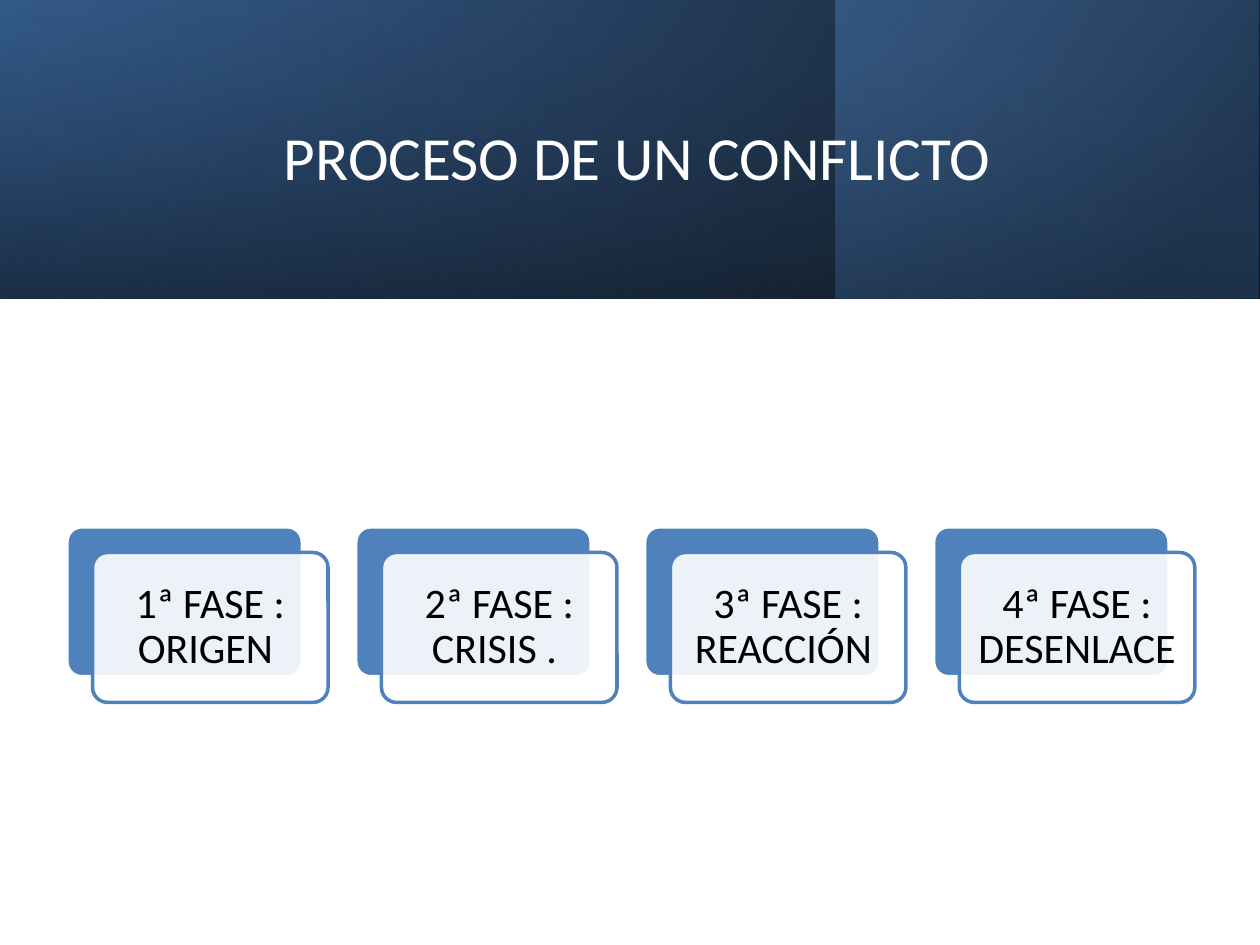
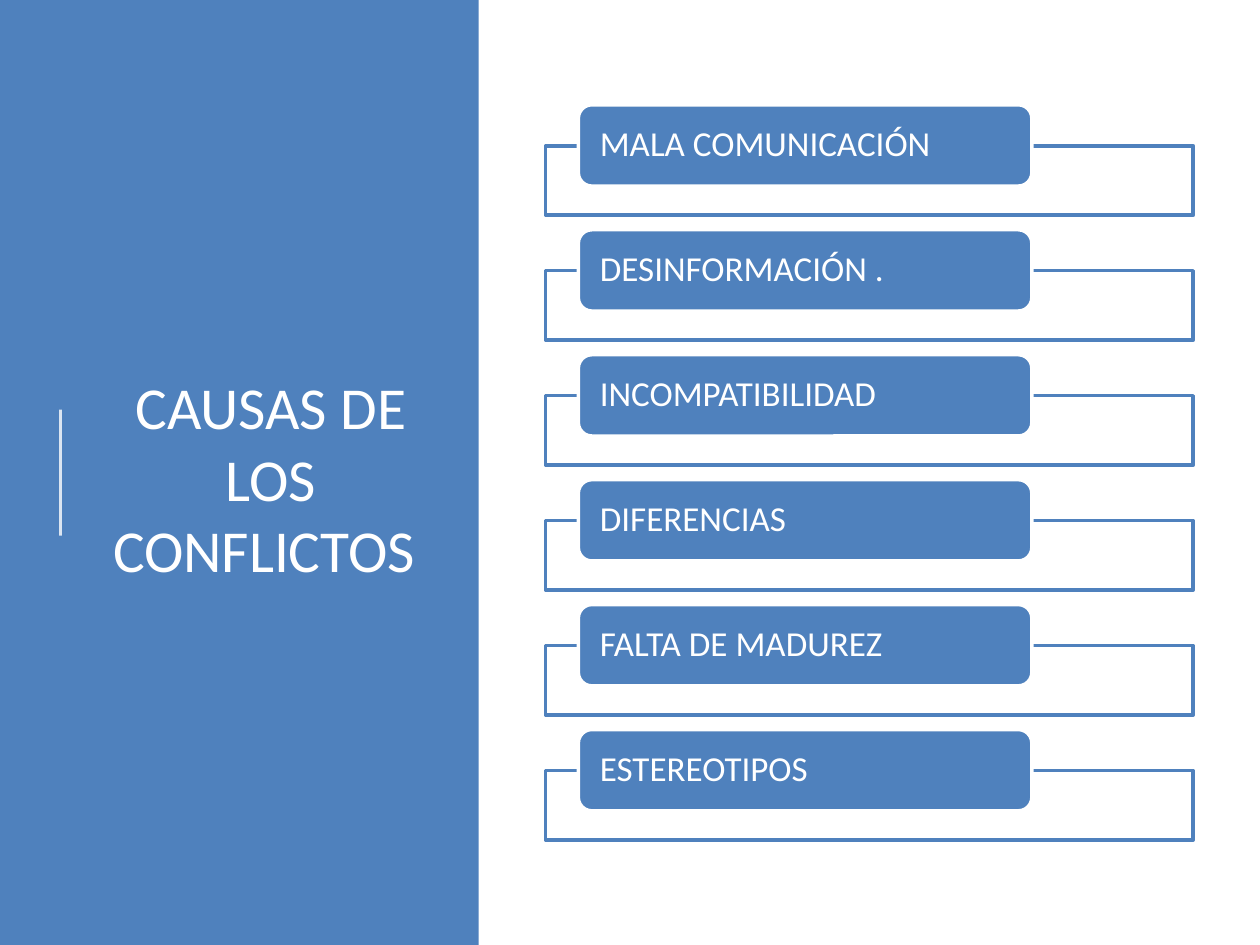
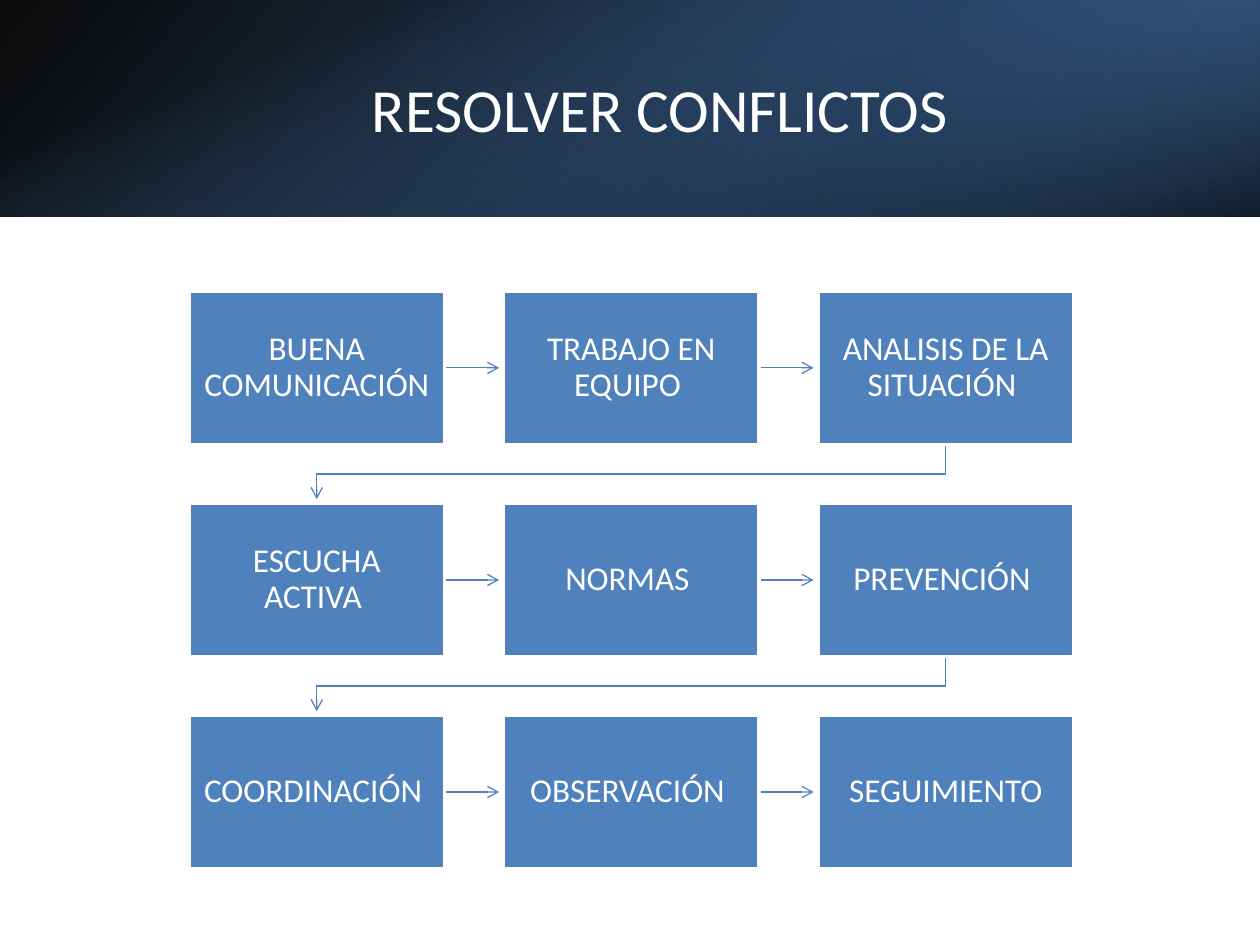
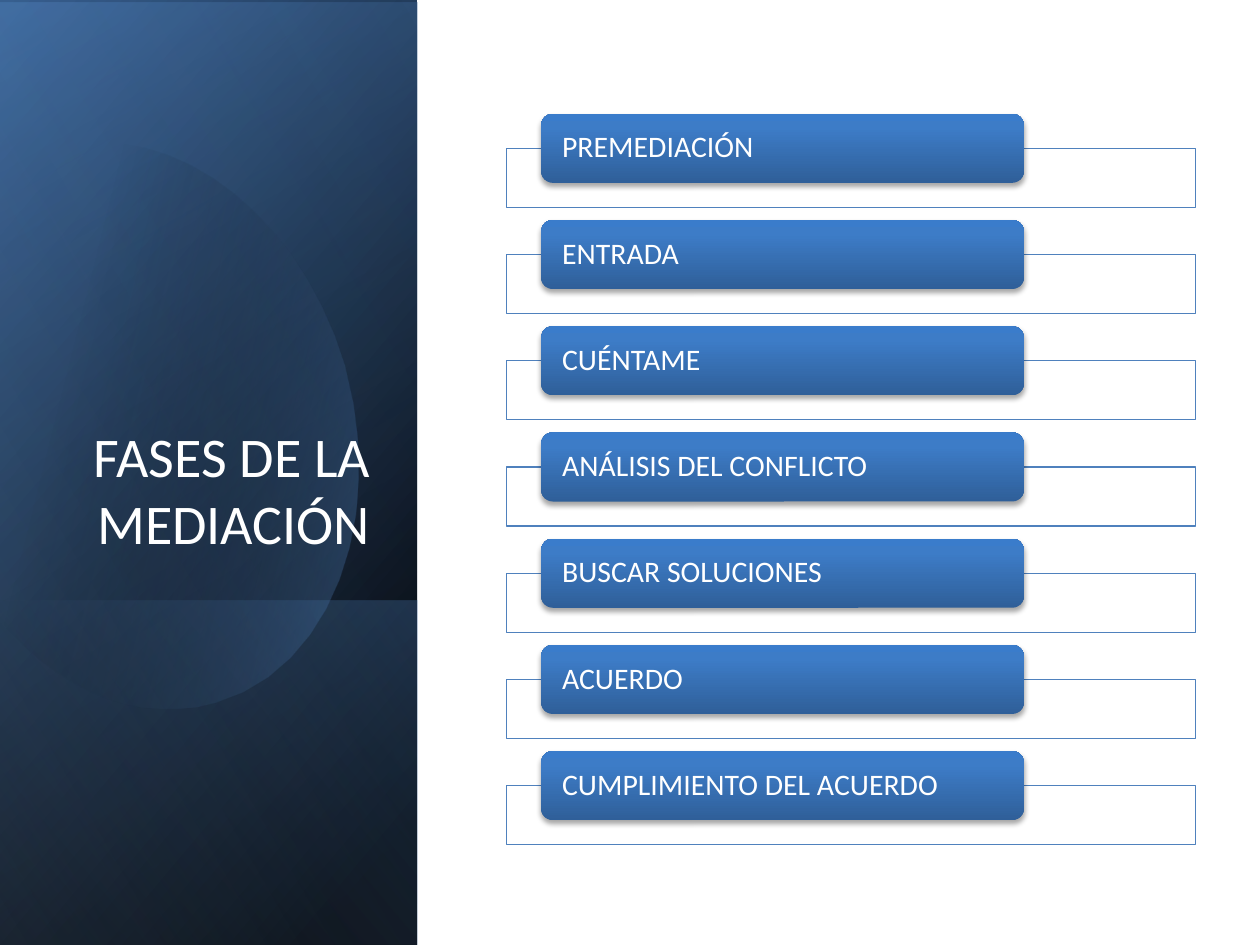
from lxml.etree import SubElement
from pptx import Presentation
from pptx.dml.color import RGBColor
from pptx.enum.shapes import MSO_CONNECTOR, MSO_SHAPE
from pptx.enum.text import MSO_ANCHOR, MSO_AUTO_SIZE, PP_ALIGN
from pptx.oxml import parse_xml
from pptx.oxml.ns import nsdecls, qn
from pptx.util import Pt

COLORS = {
    "white": "FFFFFF",
    "black": "000000",
    "blue": "4F81BD",
    "dark blue": "376092",
    "navy": "254061",
    "pale blue": "95B3D7",
    "pill dark": "2F5F99",
    "pill middle": "3D7CC7",
    "pill light": "3A7CCB",
}
FONT = "Calibri"
SLIDE_WIDTH, SLIDE_HEIGHT = 720, 540
TITLE_ONLY = 5

PHASES = ["1ª FASE : ORIGEN ", "2ª FASE : CRISIS . ",
          "3ª FASE : REACCIÓN ", "4ª FASE : DESENLACE "]
CAUSES = ["MALA COMUNICACIÓN", "DESINFORMACIÓN .", "INCOMPATIBILIDAD",
          "DIFERENCIAS", "FALTA DE MADUREZ", "ESTEREOTIPOS"]
STEPS = [
    ["BUENA COMUNICACIÓN ", "TRABAJO EN EQUIPO ", "ANALISIS DE LA SITUACIÓN "],
    ["ESCUCHA ACTIVA ", "NORMAS ", "PREVENCIÓN "],
    ["COORDINACIÓN ", "OBSERVACIÓN ", "SEGUIMIENTO"],
]
MEDIATION = ["PREMEDIACIÓN", "ENTRADA", "CUÉNTAME", "ANÁLISIS DEL CONFLICTO",
             "BUSCAR SOLUCIONES", "ACUERDO", "CUMPLIMIENTO DEL ACUERDO"]
PILL_STOPS = [(0, "pill dark", 100), (80, "pill middle", 100),
              (100, "pill light", 100)]


# Fills, lines and effects
def rgb(name):
    return RGBColor.from_string(COLORS[name])


def set_opacity(shape, percent):
    """Set the opacity of the first colour of a shape."""
    color = shape.element.spPr.find(".//" + qn("a:srgbClr"))
    SubElement(color, qn("a:alpha")).set("val", str(percent * 1000))


def set_gradient(shape, stops, angle):
    """Fill with (position, colour, opacity) stops; the angle runs clockwise."""
    stop_xml = "".join(
        f'<a:gs pos="{position * 1000}"><a:srgbClr val="{COLORS[color]}">'
        f'<a:alpha val="{opacity * 1000}"/></a:srgbClr></a:gs>'
        for position, color, opacity in stops)
    gradient = parse_xml(
        f'<a:gradFill {nsdecls("a")} rotWithShape="1"><a:gsLst>{stop_xml}</a:gsLst>'
        f'<a:lin ang="{angle * 60000}" scaled="0"/></a:gradFill>')
    shape.fill.background()
    properties = shape.element.spPr
    properties.replace(properties.find(qn("a:noFill")), gradient)


def set_line(shape, color, width):
    shape.line.color.rgb = rgb(color)
    shape.line.width = Pt(width)


def add_arrowhead(shape):
    line = shape.element.spPr.find(qn("a:ln"))
    SubElement(line, qn("a:tailEnd")).set("type", "arrow")


def add_soft_shadow(shape):
    effects = shape.element.spPr.find(qn("a:effectLst"))
    effects.append(parse_xml(
        f'<a:outerShdw {nsdecls("a")} blurRad="{Pt(3.1)}" dist="{Pt(1.8)}" '
        f'dir="5400000" rotWithShape="0"><a:srgbClr val="{COLORS["black"]}">'
        '<a:alpha val="35000"/></a:srgbClr></a:outerShdw>'))


# Shapes and text
def add_box(slide, kind, box, fill=None, line=None, line_width=2):
    shape = slide.shapes.add_shape(kind, *map(Pt, box))
    shape.shadow.inherit = False
    if fill:
        shape.fill.solid()
        shape.fill.fore_color.rgb = rgb(fill)
    if line:
        set_line(shape, line, line_width)
    else:
        shape.line.fill.background()
    return shape


def write(shape, text, size, color="white", align=PP_ALIGN.CENTER,
          anchor=MSO_ANCHOR.MIDDLE, spacing=None, insets=(7.2, 7.2)):
    frame = shape.text_frame
    frame.word_wrap = True
    frame.auto_size = MSO_AUTO_SIZE.NONE
    frame.vertical_anchor = anchor
    frame.margin_left = frame.margin_right = Pt(insets[0])
    frame.margin_top = frame.margin_bottom = Pt(insets[1])
    paragraph = frame.paragraphs[0]
    paragraph.alignment = align
    paragraph.line_spacing = spacing
    run = paragraph.add_run()
    run.text = text
    run.font.name = FONT
    run.font.size = Pt(size)
    run.font.color.rgb = rgb(color)


def add_title(slide, text, box, size, **style):
    """Place the title in front of the bands drawn so far."""
    title = slide.shapes.title
    title.left, title.top, title.width, title.height = map(Pt, box)
    title.element.getparent().append(title.element)
    write(title, text, size, insets=(7.2, 3.6), **style)


def add_band(slide, box, stops, angle, rotation=0, flip=True):
    """Draw a gradient band; box is where a turned band ends up."""
    left, top, width, height = box
    if rotation in (90, 270):
        left, top = left + (width - height) / 2, top + (height - width) / 2
        width, height = height, width
    band = add_box(slide, MSO_SHAPE.RECTANGLE, (left, top, width, height))
    set_gradient(band, stops, angle)
    band.rotation = rotation
    if flip:
        band.element.spPr.find(qn("a:xfrm")).set("flipH", "1")


def add_freeform(slide, points, close):
    start, *rest = [(Pt(x), Pt(y)) for x, y in points]
    builder = slide.shapes.build_freeform(*start)
    builder.add_line_segments(rest, close=close)
    shape = builder.convert_to_shape()
    shape.shadow.inherit = False
    return shape


def add_line(slide, start, end, color, width):
    line = slide.shapes.add_connector(
        MSO_CONNECTOR.STRAIGHT, *map(Pt, start + end))
    set_line(line, color, width)
    SubElement(line.element.spPr, qn("a:effectLst"))
    return line


def curve(start, control_1, control_2, end, pieces=12):
    """Points on a cubic curve, without its start."""
    points = []
    for piece in range(1, pieces + 1):
        t = piece / pieces
        weights = ((1 - t) ** 3, 3 * t * (1 - t) ** 2, 3 * t * t * (1 - t), t ** 3)
        corners = (start, control_1, control_2, end)
        points.append(tuple(
            sum(weight * corner[axis] for weight, corner in zip(weights, corners))
            for axis in (0, 1)))
    return points


def add_pill_list(slide, items, frame, pill, pitch, size, glossy=False):
    """Stack outlined frames, each with a labelled pill on its top edge."""
    for index, item in enumerate(items):
        shift = index * pitch
        outline = add_box(slide, MSO_SHAPE.RECTANGLE,
                          (frame[0], frame[1] + shift, *frame[2:]),
                          "white", "blue", 0.75 if glossy else 2)
        set_opacity(outline, 90)
        label = add_box(slide, MSO_SHAPE.ROUNDED_RECTANGLE,
                        (pill[0], pill[1] + shift, *pill[2:]),
                        "blue", None if glossy else "white")
        if glossy:
            set_gradient(label, PILL_STOPS, 270)
            add_soft_shadow(label)
        write(label, item, size, align=PP_ALIGN.LEFT, spacing=0.9, insets=(10, 0))


# Slides
def build_process(slide):
    height = 170.6
    add_band(slide, (0, 0, SLIDE_WIDTH, height),
             [(0, "black", 96), (100, "dark blue", 100)], 330)
    add_band(slide, (477.4, 0, 242, height),
             [(19, "navy", 68), (100, "blue", 48)], 320)
    add_band(slide, (0, 0, SLIDE_WIDTH, height),
             [(23, "dark blue", 16), (99, "black", 45)], 350, rotation=270)
    add_title(slide, "PROCESO DE UN CONFLICTO ", (81.4, 27.4, 573.8, 123.8), 35)

    # Phase cards, each over a blue plate
    left, top, width, height, pitch, offset = 38.2, 301, 134.6, 85.7, 165.1, 14.7
    for index, phase in enumerate(PHASES):
        x = left + index * pitch
        plate = add_box(slide, MSO_SHAPE.ROUNDED_RECTANGLE,
                        (x, top, width, height), "blue", "white")
        card = add_box(slide, MSO_SHAPE.ROUNDED_RECTANGLE,
                       (x + offset, top + offset, width, height), "white", "blue")
        plate.adjustments[0] = card.adjustments[0] = 0.1
        set_opacity(card, 90)
        write(card, phase, 24, "black", spacing=0.9)


def build_causes(slide):
    add_box(slide, MSO_SHAPE.RECTANGLE, (0, 0, 273.6, SLIDE_HEIGHT), "blue")
    add_title(slide, "CAUSAS DE LOS CONFLICTOS ", (55.4, 56.2, 198.7, 433.4), 34)
    accent = add_line(slide, (34.6, 306), (34.6, 234), "white", 1.5)
    set_opacity(accent, 80)
    add_pill_list(slide, CAUSES, (311.8, 83.3, 370.1, 39.7),
                  (330.5, 59.9, 259.2, 46.5), 71.4, 20)


def build_resolution(slide):
    height = 123.8
    add_band(slide, (0, 0, SLIDE_WIDTH, height),
             [(0, "black", 96), (100, "dark blue", 100)], 140)
    add_band(slide, (480, 0, 240, height),
             [(19, "navy", 68), (100, "blue", 79)], 320, rotation=180)
    add_band(slide, (0, 0, SLIDE_WIDTH, height),
             [(23, "blue", 0), (99, "black", 74)], 340, rotation=90, flip=False)
    add_title(slide, "RESOLVER CONFLICTOS", (80.6, 27.4, 593.3, 69.1), 35)

    left, top, width, height = 108, 166.4, 146, 87.6
    pitch_x, pitch_y, reach = 179.7, 121.2, 31.2
    last_column = len(STEPS[0]) - 1
    for row, steps in enumerate(STEPS):
        y = top + row * pitch_y
        for column, step in enumerate(steps):
            x = left + column * pitch_x
            # Arrow to the next step
            if column < last_column:
                middle = y + height / 2
                add_arrowhead(add_line(slide, (x + width, middle),
                                       (x + width + reach, middle), "blue", 0.75))
            elif row < len(STEPS) - 1:
                start_x, end_x = x + width / 2, left + width / 2
                bottom = y + height
                turn = bottom + (pitch_y - height) / 2
                route = add_freeform(slide, [
                    (start_x, bottom), (start_x, turn),
                    (end_x, turn), (end_x, bottom + reach)], close=False)
                route.fill.background()
                set_line(route, "blue", 0.75)
                add_arrowhead(route)
            box = add_box(slide, MSO_SHAPE.RECTANGLE,
                          (x, y, width, height), "blue", "white")
            write(box, step, 19, spacing=0.9)


def build_mediation(slide):
    width = 238.3
    panel = (0, 0, width, SLIDE_HEIGHT)
    add_band(slide, panel,
             [(8, "black", 100), (100, "dark blue", 100)], 50, rotation=90)
    add_band(slide, (0, 1.4, width, SLIDE_HEIGHT),
             [(0, "black", 0), (99, "blue", 46)], 30, rotation=90)
    add_band(slide, (0, 343, width, 197),
             [(2, "blue", 29), (100, "black", 30)], 130, rotation=90)

    # Rounded glow that runs off the left edge
    crown, right, base = (69.1, 82.1), (196.6, 208.8), (123.1, 401)
    lower_left, upper_left, shoulder = (5, 360), (-10.8, 110.9), (32.4, 85)
    glow = add_freeform(slide, [
        crown,
        *curve(crown, (123.1, 87.8), (175.7, 138.2), right),
        *curve(right, (221, 296.6), (188.6, 382.3), base),
        *curve(base, (82.1, 413.3), (38.2, 396), lower_left),
        (-2.2, 351.4), (-18, 119.5), upper_left,
        *curve(upper_left, (1.4, 98.6), (15.8, 90), shoulder),
        *curve(shoulder, (44.6, 81.4), (56.9, 80.6), crown),
    ], close=True)
    set_gradient(glow, [(29, "black", 0), (100, "blue", 43)], 14)
    glow.line.fill.background()

    add_band(slide, panel,
             [(0, "black", 0), (99, "pale blue", 11)], 120, rotation=90)
    add_title(slide, "FASES DE LA MEDIACIÓN", (34.6, 132.5, 184.3, 188.6), 32,
              align=PP_ALIGN.RIGHT, anchor=MSO_ANCHOR.BOTTOM)
    add_pill_list(slide, MEDIATION, (289.6, 84.8, 393.8, 33.7),
                  (309.3, 65, 275.8, 39.5), 60.7, 17, glossy=True)


def main():
    presentation = Presentation()
    presentation.slide_width = Pt(SLIDE_WIDTH)
    presentation.slide_height = Pt(SLIDE_HEIGHT)
    layout = presentation.slide_layouts[TITLE_ONLY]
    for build in (build_process, build_causes, build_resolution, build_mediation):
        build(presentation.slides.add_slide(layout))
    presentation.save("out.pptx")


if __name__ == "__main__":
    main()
